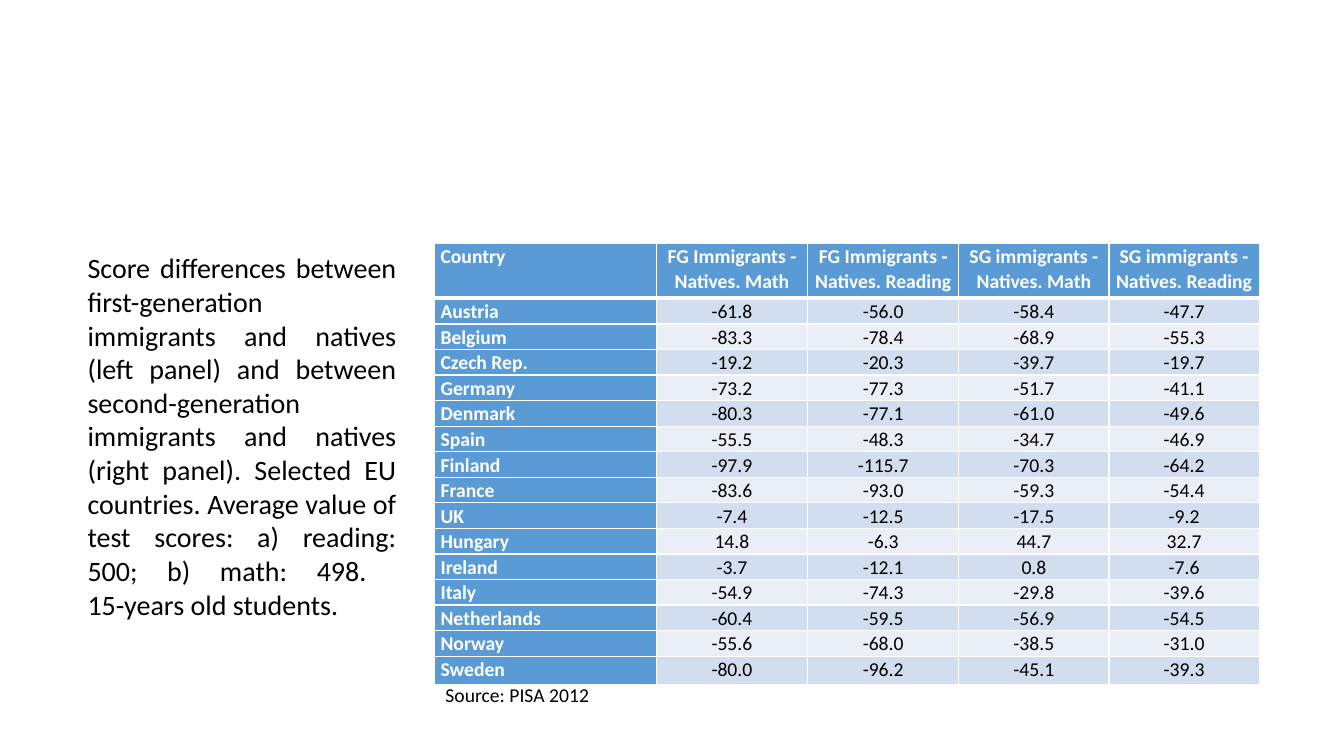
from lxml import etree
from pptx import Presentation
from pptx.dml.color import RGBColor as RGB
from pptx.enum.text import MSO_AUTO_SIZE as FIT, PP_ALIGN as AL
from pptx.oxml.ns import qn
from pptx.util import Inches, Pt

COLORS = {"blue": "5B9BD5", "band": "D2DEEF", "light": "EAEFF7",
          "white": "FFFFFF", "black": "000000"}


def set_font(p, size, color, bold=False):
    p.font.name = "Calibri"
    p.font.size = Pt(size)
    p.font.bold = bold
    p.font.color.rgb = RGB.from_string(COLORS[color])


def add_border(cell, side, width):
    ln = etree.SubElement(cell._tc.get_or_add_tcPr(), qn("a:" + side), w=str(Pt(width)))
    fill = etree.SubElement(ln, qn("a:solidFill"))
    etree.SubElement(fill, qn("a:srgbClr"), val=COLORS["white"])


prs = Presentation()
prs.slide_width, prs.slide_height = Inches(13.33), Inches(7.5)
s = prs.slides.add_slide(prs.slide_layouts[6])

# Score table
rows = [
    ("Country", "FG Immigrants - Natives. Math", "FG Immigrants - Natives. Reading",
     "SG immigrants - Natives. Math", "SG immigrants - Natives. Reading"),
    ("Austria", "-61.8", "-56.0", "-58.4", "-47.7"),
    ("Belgium", "-83.3", "-78.4", "-68.9", "-55.3"),
    ("Czech Rep.", "-19.2", "-20.3", "-39.7", "-19.7"),
    ("Germany", "-73.2", "-77.3", "-51.7", "-41.1"),
    ("Denmark", "-80.3", "-77.1", "-61.0", "-49.6"),
    ("Spain", "-55.5", "-48.3", "-34.7", "-46.9"),
    ("Finland", "-97.9", "-115.7", "-70.3", "-64.2"),
    ("France", "-83.6", "-93.0", "-59.3", "-54.4"),
    ("UK", "-7.4", "-12.5", "-17.5", "-9.2"),
    ("Hungary", "14.8", "-6.3", "44.7", "32.7"),
    ("Ireland", "-3.7", "-12.1", "0.8", "-7.6"),
    ("Italy", "-54.9", "-74.3", "-29.8", "-39.6"),
    ("Netherlands", "-60.4", "-59.5", "-56.9", "-54.5"),
    ("Norway", "-55.6", "-68.0", "-38.5", "-31.0"),
    ("Sweden", "-80.0", "-96.2", "-45.1", "-39.3"),
]
col_widths = [2.2, 1.5, 1.5, 1.49, 1.49]
row_heights = [0.55] + [0.25] * 14 + [0.28]
table = s.shapes.add_table(len(rows), len(col_widths), Inches(4.31), Inches(2.41),
                           Inches(8.18), Inches(4.34)).table
table.first_col = True
for col, width in zip(table.columns, col_widths):
    col.width = Inches(width)
for row, height in zip(table.rows, row_heights):
    row.height = Inches(height)

for i, values in enumerate(rows):
    for j, value in enumerate(values):
        cell = table.cell(i, j)
        heading = i == 0 or j == 0
        cell.margin_left = cell.margin_right = Inches(0.06)
        cell.margin_top = cell.margin_bottom = 0
        add_border(cell, "lnL", 1)
        add_border(cell, "lnR", 1)
        add_border(cell, "lnT", 3 if i == 1 else 1)
        add_border(cell, "lnB", 3 if i == 0 else 1)
        cell.fill.solid()
        fill = "blue" if heading else "band" if i % 2 else "light"
        cell.fill.fore_color.rgb = RGB.from_string(COLORS[fill])
        p = cell.text_frame.paragraphs[0]
        p.text = value
        p.alignment = AL.CENTER if j else AL.LEFT
        p.line_spacing = 1.07
        p.space_after = Pt(0 if i else 8)
        set_font(p, 14, "white" if heading else "black", heading)

# Description and source note
description = (
    "Score differences between first-generation immigrants and natives (left panel) "
    "and between second-generation immigrants and natives (right panel). Selected EU "
    "countries. Average value of test scores: a) reading: 500; b) math: 498. \v"
    "15-years old students.")
for left, top, width, height, text, size, align in [
    (0.77, 2.44, 3.26, 3.8, description, 20, AL.JUSTIFY),
    (4.32, 6.73, 2.5, 0.34, "Source: PISA 2012", 14, AL.LEFT),
]:
    tf = s.shapes.add_textbox(Inches(left), Inches(top), Inches(width), Inches(height)).text_frame
    tf.word_wrap = True
    tf.auto_size = FIT.SHAPE_TO_FIT_TEXT
    p = tf.paragraphs[0]
    p.text = text
    p.alignment = align
    set_font(p, size, "black")

prs.save("out.pptx")
